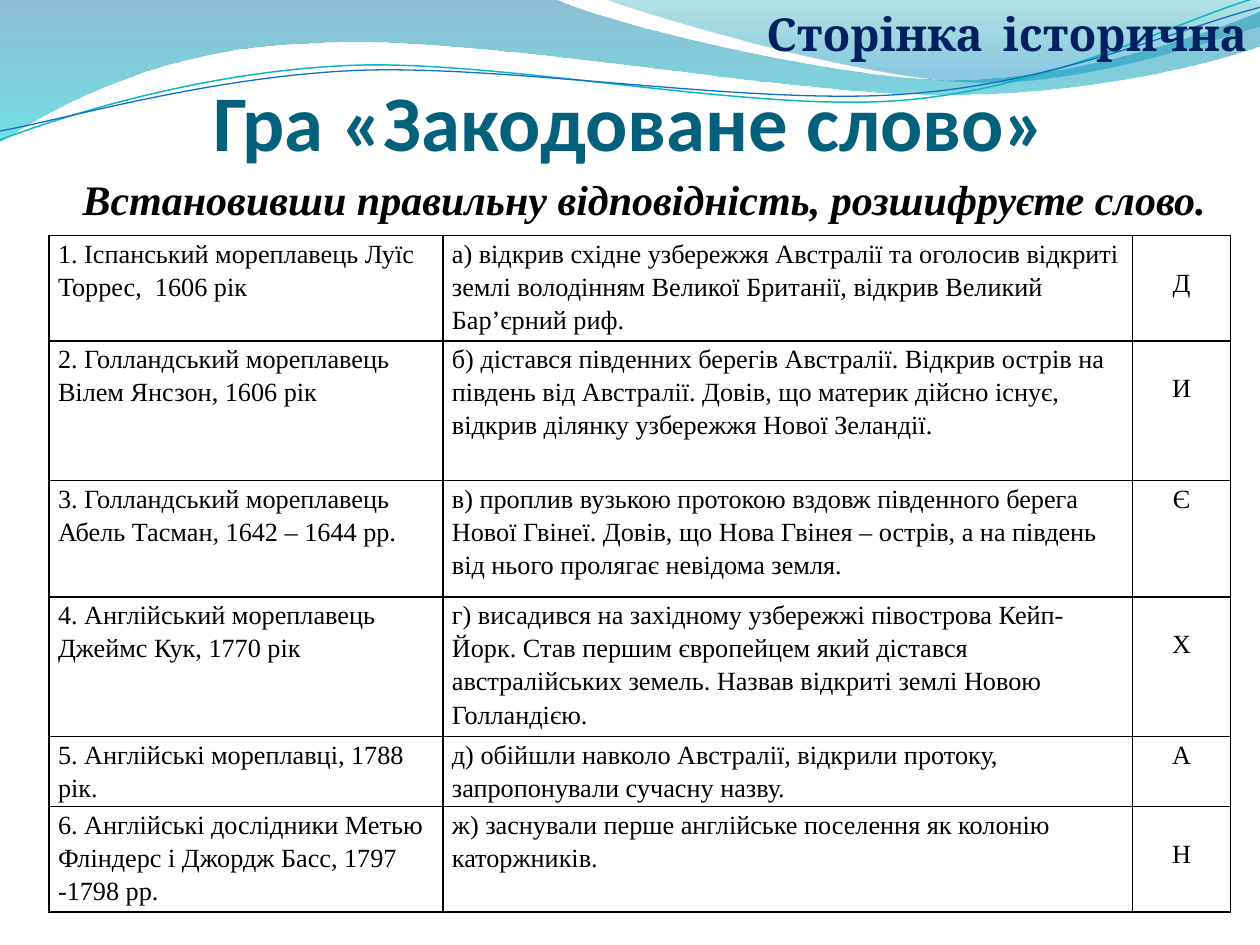
from lxml import etree
from pptx import Presentation
from pptx import util as u
from pptx.dml.color import RGBColor
from pptx.enum import text
from pptx.oxml import parse_xml
from pptx.oxml.ns import nsdecls, qn

COLORS = {
    "black": "000000", "title": "04617B", "heading": "002060",
    "wave_top": "0074A1", "wave_bottom": "00C6CF",
    "corner_top": "00A1A9", "corner_bottom": "008BBF",
    "teal_line": "0AB8BF", "blue_line": "0F6FC6",
}
ALIGN = text.PP_ALIGN
ANCHOR = text.MSO_ANCHOR


def write_text(frame, content, size=15, font="Times New Roman", color="black",
               bold=False, italic=False, align=ALIGN.LEFT, spacing=None):
    paragraph = frame.paragraphs[0]
    paragraph.alignment = align
    paragraph.line_spacing = spacing
    run = paragraph.add_run()
    run.text = content
    run.font.size = u.Pt(size)
    run.font.name = font
    run.font.bold = bold
    run.font.italic = italic
    run.font.color.rgb = RGBColor.from_string(COLORS[color])


def draw_outline(slide, start, segments, close):
    """Draw an outline in cm; a pair is a line end, six numbers are a Bezier curve."""
    points = [(u.Cm(segment[i]), u.Cm(segment[i + 1]))
              for segment in segments for i in range(0, len(segment), 2)]
    builder = slide.shapes.build_freeform(u.Cm(start[0]), u.Cm(start[1]))
    builder.add_line_segments(points, close=close)
    shape = builder.convert_to_shape()
    shape.shadow.inherit = False
    # Merge the three points of each curve into one Bezier command
    line_commands = iter(shape._element.xpath(".//a:lnTo"))
    for segment in segments:
        command = next(line_commands)
        if len(segment) == 6:
            command.tag = qn("a:cubicBezTo")
            for _ in range(2):
                extra = next(line_commands)
                command.append(extra[0])
                extra.getparent().remove(extra)
    return shape


presentation = Presentation()
presentation.slide_width = u.Cm(25.4)
presentation.slide_height = u.Cm(19.05)
slide = presentation.slides.add_slide(presentation.slide_layouts[6])

# Gradient waves: start, segments, then (position, colour, opacity in %) stops
waves = [
    ((0, 0), [(11.18, -0.03),
              (12.09, 0.43, 16.87, 1.6, 19.25, 1.6),
              (21.67, 1.6, 24.33, 0.66, 25.4, 0.23),
              (25.43, 0.91),
              (24.97, 1.12, 22.1, 1.93, 18.95, 1.91),
              (15.8, 1.91, 9.7, 0.71, 6.53, 0.86),
              (3.28, 0.91, 1.17, 2.11, -0.03, 2.87)],
     [(0, "wave_top", 45), (1, "wave_bottom", 55)]),
    ((12.17, -0.03), [(12.93, 0.28, 17.32, 1.57, 19.53, 1.65),
                      (21.74, 1.75, 24.41, 0.81, 25.4, 0.53),
                      (25.4, 0)],
     [(0, "corner_top", 30), (0.8, "corner_bottom", 45)]),
]
for start, segments, stops in waves:
    wave = draw_outline(slide, start, segments, close=True)
    wave.line.fill.background()
    wave.fill.gradient()
    wave.fill.gradient_angle = 270
    for stop, (position, color, _) in zip(wave.fill.gradient_stops, stops):
        stop.position = position
        stop.color.rgb = RGBColor.from_string(COLORS[color])
    for element, (_, _, opacity) in zip(wave._element.xpath(".//a:gs/a:srgbClr"), stops):
        etree.SubElement(element, qn("a:alpha")).set("val", str(opacity * 1000))

# Thin wavy lines
wave_lines = [
    ((0, 2.82), [(1.22, 2.36, 4.01, 1.45, 7.04, 1.32),
                 (10.03, 1.19, 15.06, 2.26, 18.11, 2.03),
                 (21.16, 1.8, 23.83, 0.38, 25.35, -0.05)], "teal_line", 0.85),
    ((0, 2.64), [(1.19, 2.44, 4.17, 1.55, 7.19, 1.42),
                 (10.24, 1.3, 15.16, 2.13, 18.21, 1.9),
                 (21.23, 1.7, 23.9, 0.53, 25.4, 0.15)], "blue_line", 0.75),
]
for start, segments, color, width in wave_lines:
    line = draw_outline(slide, start, segments, close=False)
    line.fill.background()
    line.line.color.rgb = RGBColor.from_string(COLORS[color])
    line.line.width = u.Pt(width)

# Headings
title = slide.shapes.add_textbox(u.Cm(1.27), u.Cm(1.96), u.Cm(22.86), u.Cm(1.42)).text_frame
title.word_wrap = True
title.vertical_anchor = ANCHOR.BOTTOM
title.margin_left = title.margin_right = title.margin_bottom = 0
write_text(title, "Гра «Закодоване слово»", size=45, font="Calibri", color="title",
           bold=True, align=ALIGN.CENTER)

page_name = slide.shapes.add_textbox(u.Cm(10.92), 0, u.Cm(14.48), u.Cm(1.57)).text_frame
page_name.word_wrap = True
write_text(page_name, "Сторінка  історична", size=26, font="Cambria", color="heading",
           bold=True, align=ALIGN.RIGHT)

# Matching table: height, sailor, deed, code letter, whether the letter sits a line lower
rows = [
    (2.12, "1. Іспанський мореплавець Луїс Торрес,  1606 рік",
     "а) відкрив східне узбережжя Австралії та оголосив відкриті землі володінням "
     "Великої Британії, відкрив Великий Бар’єрний риф.", "Д", True),
    (2.82, "2. Голландський мореплавець Вілем Янсзон, 1606 рік",
     "б) дістався південних берегів Австралії. Відкрив острів на південь від Австралії. "
     "Довів, що материк дійсно існує, відкрив ділянку узбережжя Нової Зеландії.", "И", True),
    (2.34, "3. Голландський мореплавець Абель Тасман, 1642 – 1644 рр.",
     "в) проплив вузькою протокою вздовж південного берега Нової Гвінеї. Довів, що Нова "
     "Гвінея – острів, а на південь від нього пролягає невідома земля.", "Є", False),
    (2.82, "4. Англійський мореплавець Джеймс Кук, 1770 рік",
     "г) висадився на західному узбережжі півострова Кейп-Йорк. Став першим європейцем "
     "який дістався австралійських земель. Назвав відкриті землі Новою Голландією.", "Х", True),
    (1.41, "5. Англійські мореплавці, 1788 рік.",
     "д) обійшли навколо Австралії, відкрили протоку, запропонували сучасну назву.",
     "А", False),
    (2.12, "6. Англійські дослідники Метью Фліндерс і Джордж Басс, 1797 -1798 рр.",
     "ж) заснували перше англійське поселення як колонію каторжників.", "Н", True),
]
column_widths = [7.94, 13.9, 1.98]
table = slide.shapes.add_table(len(rows), len(column_widths), u.Cm(0.99), u.Cm(4.75),
                               u.Cm(sum(column_widths)),
                               u.Cm(sum(row[0] for row in rows))).table
table.first_row = table.horz_banding = False
for column, width in zip(table.columns, column_widths):
    column.width = u.Cm(width)
for row_index, (height, sailor, deed, letter, lowered) in enumerate(rows):
    table.rows[row_index].height = u.Cm(height)
    for column_index, content in enumerate((sailor, deed, letter)):
        is_letter = column_index == 2
        cell = table.cell(row_index, column_index)
        cell.margin_left = cell.margin_right = u.Cm(0.18)
        cell.margin_top = u.Cm(0.59 if is_letter and lowered else 0)
        cell.margin_bottom = 0
        write_text(cell.text_frame, content, spacing=u.Pt(19),
                   align=ALIGN.CENTER if is_letter else ALIGN.LEFT)
        properties = cell._tc.get_or_add_tcPr()
        for side in ("lnL", "lnR", "lnT", "lnB"):
            properties.append(parse_xml(
                f'<a:{side} {nsdecls("a")} w="12700"><a:solidFill>'
                f'<a:srgbClr val="{COLORS["black"]}"/></a:solidFill></a:{side}>'))
        cell.fill.background()

task = slide.shapes.add_textbox(u.Cm(0.58), u.Cm(3.38), u.Cm(24.82), u.Cm(1.27)).text_frame
task.word_wrap = True
task.vertical_anchor = ANCHOR.MIDDLE
write_text(task, "Встановивши правильну відповідність, розшифруєте слово.", size=24,
           bold=True, italic=True, align=ALIGN.CENTER)

presentation.save("out.pptx")
